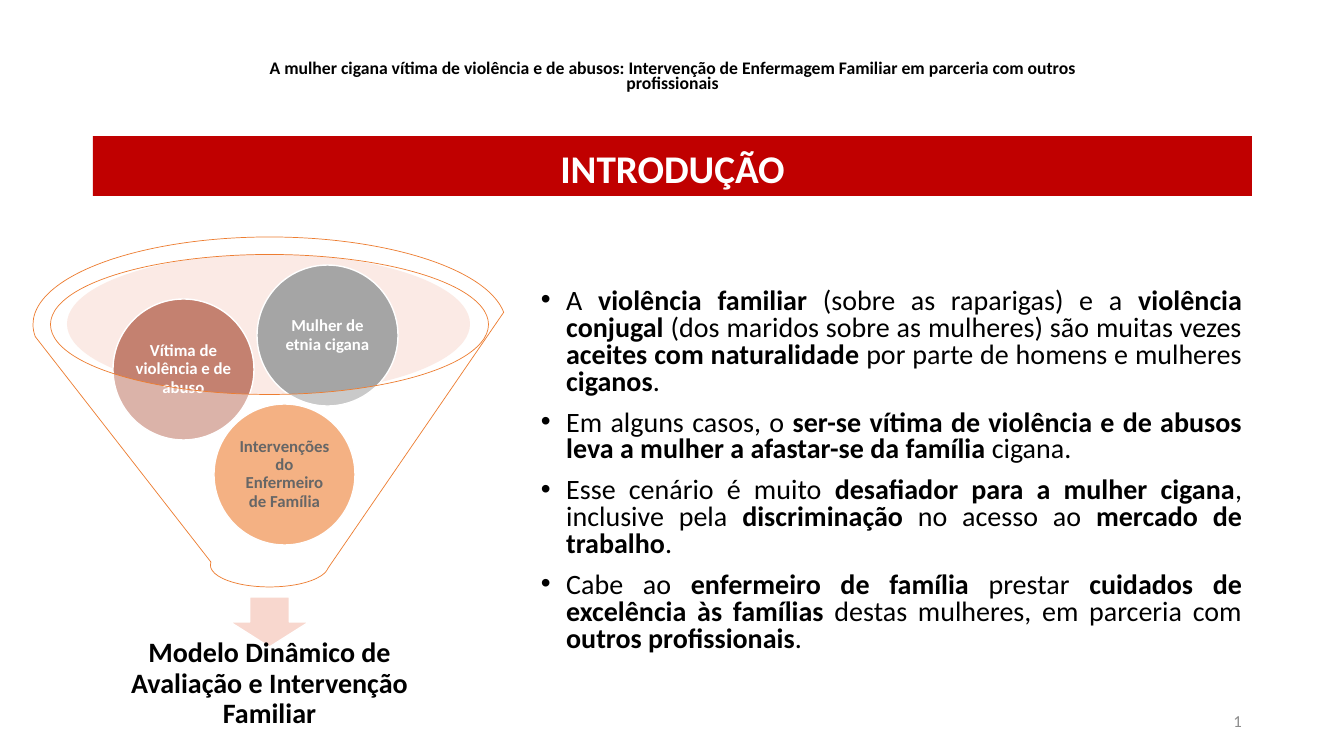
from lxml import etree
from pptx import Presentation
from pptx import util as u
from pptx.dml.color import RGBColor
from pptx.enum import shapes, text
from pptx.oxml.ns import qn

PX = 914400 / 100.8
FONT = "Calibri"
COLORS = {
    "black": "000000", "white": "FFFFFF", "red": "C00000", "number": "8C8C8C",
    "mouth": "F6CCBE", "arrow": "F8D7CE", "orange": "ED7D31",
    "clay": "C48170", "gray": "A5A5A5",
}
KIND = shapes.MSO_SHAPE
ALIGN = text.PP_ALIGN
ANCHOR = text.MSO_ANCHOR

deck = Presentation()
deck.slide_width, deck.slide_height = u.Inches(13.333), u.Inches(7.5)
page = deck.slides.add_slide(deck.slide_layouts[5])


def write(box, words, size, color, anchor, align=ALIGN.CENTER, spacing=1.0, inset=(10, 5)):
    """Fill a shape with paragraphs; words between asterisks are bold."""
    frame = box.text_frame
    frame.word_wrap = True
    frame.auto_size = text.MSO_AUTO_SIZE.NONE
    frame.vertical_anchor = anchor
    frame.margin_left = frame.margin_right = round(inset[0] * PX)
    frame.margin_top = frame.margin_bottom = round(inset[1] * PX)
    for index, line in enumerate(words):
        para = frame.add_paragraph() if index else frame.paragraphs[0]
        para.alignment, para.line_spacing = align, spacing
        para.space_before = u.Pt(10 if index else 0)
        for part, piece in enumerate(line.split("*")):
            if piece:
                span = para.add_run()
                span.text = piece
                span.font.name, span.font.size = FONT, u.Pt(size)
                span.font.bold = part % 2 == 1
                span.font.color.rgb = RGBColor.from_string(COLORS[color])
    return frame


def draw(kind, place, fill, line=None, width=1, alpha=None):
    """Add a preset shape, or a text box when kind is None."""
    place = [round(n * PX) for n in place]
    if kind is None:
        return page.shapes.add_textbox(*place)
    shape = page.shapes.add_shape(kind, *place)
    shape.shadow.inherit = False
    shape.fill.solid()
    shape.fill.fore_color.rgb = RGBColor.from_string(COLORS[fill])
    if alpha:
        tint = shape.fill._xPr.find(".//" + qn("a:srgbClr"))
        etree.SubElement(tint, qn("a:alpha")).set("val", str(alpha * 1000))
    if line:
        shape.line.color.rgb = RGBColor.from_string(COLORS[line])
        shape.line.width = u.Pt(width)
    else:
        shape.line.fill.background()
    return shape


# Title band
title = page.shapes.title
title.left, title.top, title.width, title.height = [round(n * PX) for n in (93, 136, 1159, 60)]
title.fill.solid()
title.fill.fore_color.rgb = RGBColor.from_string(COLORS["red"])
write(title, ["*INTRODUÇÃO*"], 28, "white", ANCHOR.BOTTOM)

# Running header
header = draw(None, (219, 58, 907, 66), None)
write(header, ["*A mulher cigana vítima de violência e de abusos: Intervenção de "
               "Enfermagem Familiar em parceria com outros profissionais*"],
      12.6, "black", ANCHOR.TOP, spacing=0.7)

# Bulleted argument
points = [
    "A *violência familiar *(sobre as raparigas) e a *violência conjugal *(dos maridos sobre "
    "as mulheres) são muitas vezes *aceites com naturalidade *por parte de homens e "
    "mulheres *ciganos*.",
    "Em alguns casos, o *ser-se vítima de violência e de abusos leva a mulher a afastar-se "
    "da família *cigana.",
    "Esse cenário é muito *desafiador para a mulher cigana*, inclusive pela *discriminação* "
    "no acesso ao *mercado de trabalho*.",
    "Cabe ao *enfermeiro de família *prestar *cuidados de excelência às famílias *destas "
    "mulheres, em parceria com *outros profissionais*.",
]
body = draw(None, (531, 284, 721, 397), None)
frame = write(body, points, 20, "black", ANCHOR.TOP, ALIGN.JUSTIFY, 0.8)
for para in frame.paragraphs:
    props = para._p.get_or_add_pPr()
    props.set("marL", str(u.Inches(0.25)))
    props.set("indent", str(-u.Inches(0.25)))
    etree.SubElement(props, qn("a:buFont")).set("typeface", "Arial")
    etree.SubElement(props, qn("a:buChar")).set("char", "•")

# Funnel mouth, arrow and outcome
draw(KIND.OVAL, (67, 254, 403, 140), "mouth", alpha=40)
draw(KIND.DOWN_ARROW, (230, 597, 79, 50), "arrow", "white")
outcome = draw(None, (82, 637, 375, 94), None)
write(outcome, ["*Modelo Dinâmico de Avaliação e Intervenção Familiar*"], 20, "black",
      ANCHOR.MIDDLE, spacing=0.9, inset=(16, 16))

# Circles falling through the funnel
circles = [
    (214, 404, "orange", "black", "Intervenções do Enfermeiro de Família"),
    (113, 299, "clay", "white", "Vítima de violência e de abuso"),
    (257, 265, "gray", "white", "Mulher de etnia cigana"),
]
for left, top, fill, ink, label in circles:
    circle = draw(KIND.OVAL, (left, top, 141, 141), fill, "white")
    write(circle, [f"*{label}*"], 12, ink, ANCHOR.MIDDLE, spacing=0.9, inset=(2, 2))

# Translucent funnel in front
draw(KIND.FUNNEL, (33, 237, 473, 350), "white", "orange", 0.5, alpha=40)

# Slide number field
number = draw(None, (950, 701, 302, 40), None)
frame = write(number, ["2"], 12, "number", ANCHOR.MIDDLE, ALIGN.RIGHT)
field = frame.paragraphs[0].runs[0]._r
field.tag = qn("a:fld")
field.set("id", "{B6F15528-21DE-4FAA-801E-634DDDAF4B2B}")
field.set("type", "slidenum")
field.find(qn("a:t")).text = "2"

deck.save("out.pptx")
